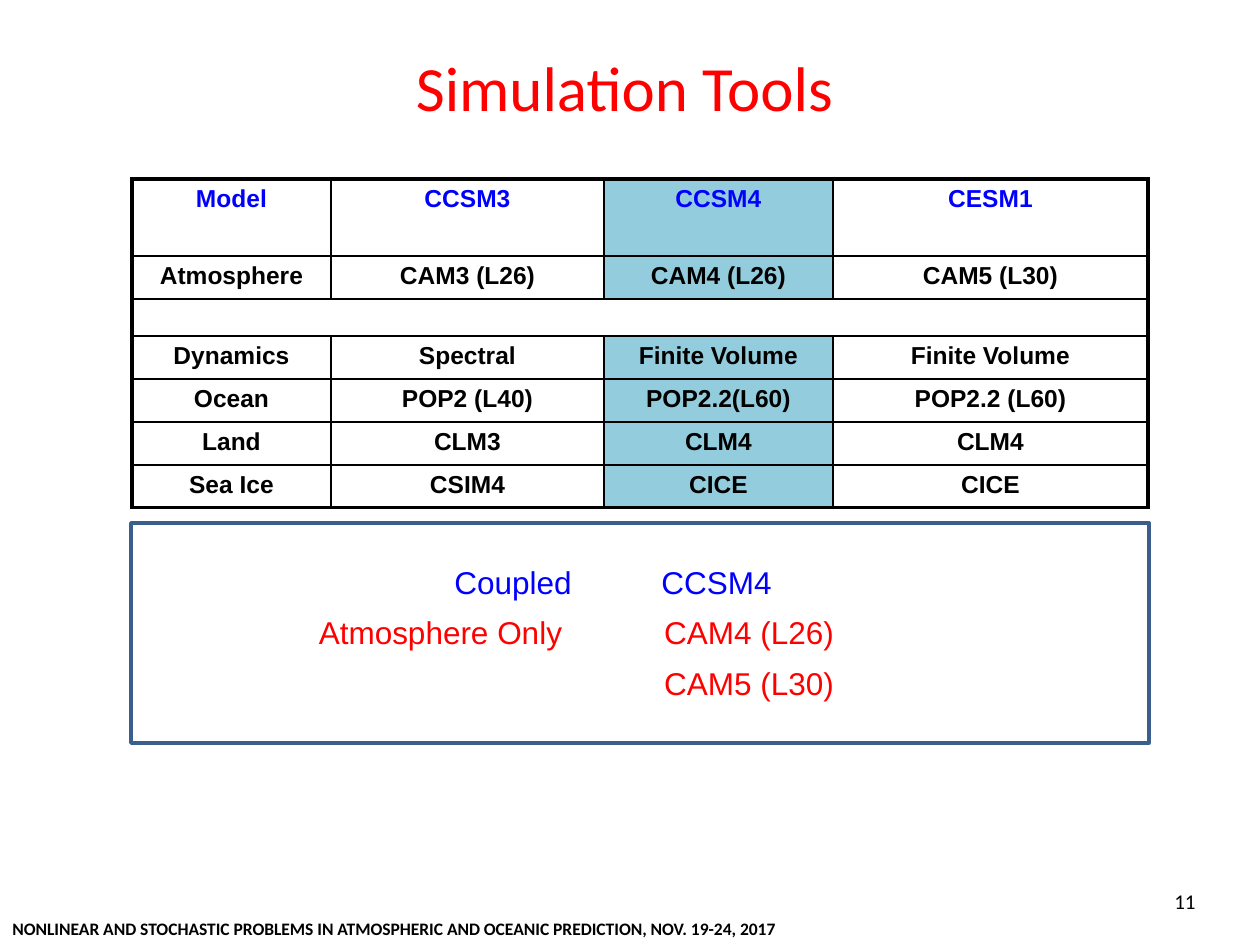
"""Build the Simulation Tools slide with its model table and run summary."""
from lxml.etree import SubElement
from pptx import Presentation
from pptx.dml.color import RGBColor
from pptx.enum.shapes import MSO_SHAPE as SHAPE
from pptx.enum.text import MSO_ANCHOR as ANCHOR, PP_ALIGN as ALIGN
from pptx.oxml.ns import qn
from pptx.util import Emu, Pt

COLORS = {"black": "000000", "white": "FFFFFF", "red": "FF0000", "blue": "0000FF",
          "highlight": "93CDDD", "frame": "3A5F8C"}
RGB = {name: RGBColor.from_string(value) for name, value in COLORS.items()}
SCALE = 914400 / 126


def px(*lengths):
    return [Emu(round(length * SCALE)) for length in lengths]


def write(frame, text, size, color, font="Arial", bold=False, align=ALIGN.CENTER):
    paragraph = frame.paragraphs[0]
    paragraph.alignment = align
    run = paragraph.add_run()
    run.text = text
    run.font.name = font
    run.font.size = Pt(size)
    run.font.bold = bold
    run.font.color.rgb = RGB[color]


deck = Presentation()
deck.slide_width, deck.slide_height = px(1260, 945)
slide = deck.slides.add_slide(deck.slide_layouts[6])
shapes = slide.shapes

summary = shapes.add_shape(SHAPE.RECTANGLE, *px(131, 523, 1018, 220))
summary.shadow.inherit = False
summary.fill.solid()
summary.fill.fore_color.rgb = RGB["white"]
summary.line.color.rgb = RGB["frame"]
summary.line.width = Pt(2)

models = [
    ["Model", "CCSM3", "CCSM4", "CESM1"],
    ["Atmosphere", "CAM3 (L26)", "CAM4 (L26)", "CAM5 (L30)"],
    [],
    ["Dynamics", "Spectral", "Finite Volume", "Finite Volume"],
    ["Ocean", "POP2 (L40)", "POP2.2(L60)", "POP2.2 (L60)"],
    ["Land", "CLM3", "CLM4", "CLM4"],
    ["Sea Ice", "CSIM4", "CICE", "CICE"],
]
column_widths = px(199, 273, 229, 315)
row_heights = px(77, 43, 37, 43, 43, 43, 43)
last_row, last_column = len(models) - 1, len(column_widths) - 1
highlighted_column = 2

grid = shapes.add_table(len(models), len(column_widths), *px(132, 179, 1016, 329)).table
grid.first_row = grid.horz_banding = False
for column, width in zip(grid.columns, column_widths):
    column.width = width
for row, height in zip(grid.rows, row_heights):
    row.height = height
divider = models.index([])
grid.cell(divider, 0).merge(grid.cell(divider, last_column))

for r, labels in enumerate(models):
    for c in range(len(column_widths)):
        cell = grid.cell(r, c)
        if cell.is_spanned:
            continue
        outer_edges = {"lnL": c == 0, "lnR": c == last_column or not labels,
                       "lnT": r == 0, "lnB": r == last_row}
        properties = cell._tc.get_or_add_tcPr()
        for edge, outer in outer_edges.items():
            border = SubElement(properties, qn(f"a:{edge}"), w=str(Pt(2.25 if outer else 1)))
            paint = SubElement(border, qn("a:solidFill"))
            SubElement(paint, qn("a:srgbClr"), val=COLORS["black"])
        cell.fill.solid()
        highlighted = labels and c == highlighted_column
        cell.fill.fore_color.rgb = RGB["highlight" if highlighted else "white"]
        if labels:
            write(cell.text_frame, labels[c], 14, "black" if r else "blue", bold=True)
        else:
            blank_line = cell.text_frame.paragraphs[0]._p
            blank_font = SubElement(blank_line, qn("a:endParaRPr"), sz="1200")
            SubElement(blank_font, qn("a:latin"), typeface="Arial")

captions = [
    ("Simulation Tools", (210, 42, 829, 89), 36, "red", "Calibri", False, ALIGN.CENTER),
    ("NONLINEAR AND STOCHASTIC PROBLEMS IN ATMOSPHERIC AND OCEANIC PREDICTION, NOV. 19-24, 2017",
     (0, 911, 1260, 34), 10, "black", "Calibri", True, ALIGN.LEFT),
    ("11", (914, 876, 294, 50), 12, "black", "Calibri", False, ALIGN.RIGHT),
]
runs = [
    ("Coupled", (441, 557, 144, 50), "blue"),
    ("CCSM4", (648, 557, 137, 50), "blue"),
    ("Atmosphere Only", (292, 607, 297, 50), "red"),
    ("CAM4 (L26)", (649, 607, 200, 50), "red"),
    ("CAM5 (L30)", (649, 658, 200, 50), "red"),
]
captions += [(text, place, 18, color, "Arial", False, ALIGN.CENTER) for text, place, color in runs]
for text, place, size, color, font, bold, align in captions:
    frame = shapes.add_textbox(*px(*place)).text_frame
    frame.word_wrap = True
    frame.vertical_anchor = ANCHOR.MIDDLE
    write(frame, text, size, color, font, bold, align)

deck.save("out.pptx")
